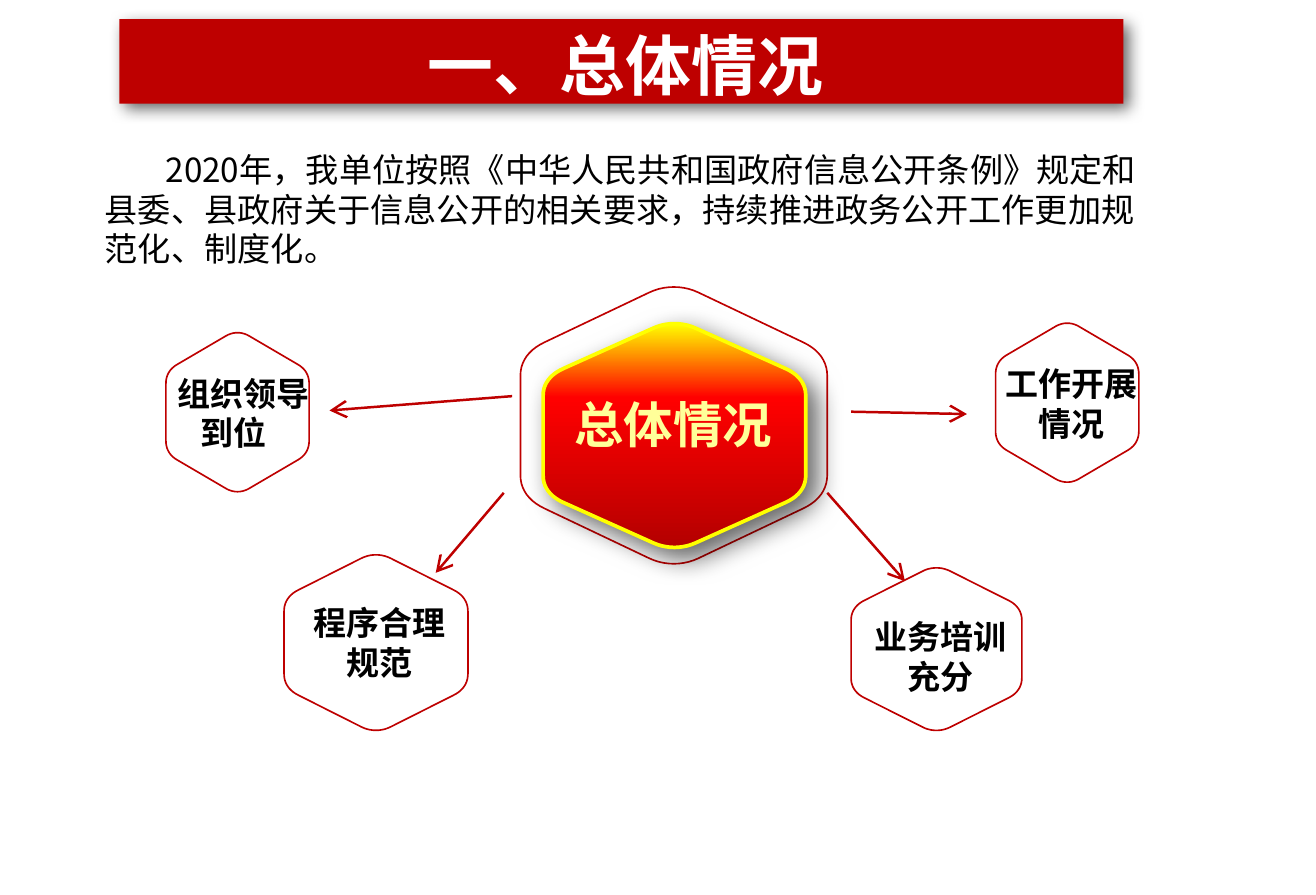
import pptx
import pptx.dml.color
import pptx.enum.shapes
import pptx.enum.text
import pptx.oxml
import pptx.oxml.ns
import pptx.util

EMU_PER_PX = 9144  # 100 px to the inch
FONT = "Noto Sans CJK SC"
RED = "BE0000"
YELLOW = "FFFF00"
BLACK = "000000"
CENTER = pptx.enum.text.PP_ALIGN.CENTER
LEFT = pptx.enum.text.PP_ALIGN.LEFT
qn = pptx.oxml.ns.qn

# Right half of the rounded hexagon's corners, as fractions of its size:
# curve start, two control points, curve end
TOP = [(0.42, 0.026), (0.47, 0), (0.53, 0), (0.58, 0.026)]
UPPER_RIGHT = [(0.922, 0.204), (0.973, 0.23), (1, 0.272), (1, 0.323)]


def px(length):
    return pptx.util.Emu(round(length * EMU_PER_PX))


def color(value):
    return pptx.dml.color.RGBColor.from_string(value)


def xml(tag, content):
    return pptx.oxml.parse_xml(f'<a:{tag} {pptx.oxml.ns.nsdecls("a")}{content}</a:{tag}>')


def gradient(stops, angle):
    stop_xml = "".join(f'<a:gs pos="{position * 1000}"><a:srgbClr val="{value}"/></a:gs>'
                       for position, value in stops)
    return xml("gradFill", f' rotWithShape="1"><a:gsLst>{stop_xml}</a:gsLst>'
                           f'<a:lin ang="{angle * 60000}" scaled="0"/>')


def curve(points, steps=10):
    a, b, c, d = points
    for step in range(steps + 1):
        t = step / steps
        u = 1 - t
        yield tuple(u**3 * a[i] + 3 * u * u * t * b[i] + 3 * u * t * t * c[i] + t**3 * d[i]
                    for i in (0, 1))


def hexagon_outline():
    lower_right = [(x, 1 - y) for x, y in reversed(UPPER_RIGHT)]
    half = [TOP, UPPER_RIGHT, lower_right]
    turned = [[(1 - x, 1 - y) for x, y in corner] for corner in half]
    return [point for corner in half + turned for point in curve(corner)]


class SlideBuilder:
    def __init__(self, slide):
        self.slide = slide
        self.shapes = slide.shapes

    def shadow(self, shape, blur, distance):
        effects = shape._element.spPr.find(qn("a:effectLst"))
        effects.append(xml("outerShdw", f' blurRad="{blur * 12700}" dist="{distance * 12700}" '
                           'dir="2700000" algn="tl" rotWithShape="0">'
                           f'<a:srgbClr val="{BLACK}"><a:alpha val="60000"/></a:srgbClr>'))

    def hexagon(self, left, top, width, height, line=RED, weight=1):
        points = [(px(left + x * width), px(top + y * height)) for x, y in hexagon_outline()]
        builder = self.shapes.build_freeform(*points[0])
        builder.add_line_segments(points[1:], close=True)
        shape = builder.convert_to_shape()
        shape.shadow.inherit = False
        shape.fill.background()
        shape.line.color.rgb = color(line)
        shape.line.width = pptx.util.Pt(weight)
        return shape

    def glowing_hexagon(self, left, top, width, height, stops):
        shape = self.hexagon(left, top, width, height, YELLOW, 2.25)
        properties = shape._element.spPr
        properties.replace(properties.find(qn("a:noFill")), gradient(stops, 270))
        self.shadow(shape, 16, 8)

    def banner(self, left, top, width, height):
        shape = self.shapes.add_shape(pptx.enum.shapes.MSO_SHAPE.RECTANGLE,
                                      px(left), px(top), px(width), px(height))
        shape.shadow.inherit = False
        shape.fill.solid()
        shape.fill.fore_color.rgb = color(RED)
        shape.line.fill.background()
        self.shadow(shape, 10, 4)

    def arrow(self, x1, y1, x2, y2):
        connector = self.shapes.add_connector(pptx.enum.shapes.MSO_CONNECTOR.STRAIGHT,
                                              px(x1), px(y1), px(x2), px(y2))
        connector.line.color.rgb = color(RED)
        connector.line.width = pptx.util.Pt(1.5)
        properties = connector._element.spPr
        properties.find(qn("a:ln")).append(xml("tailEnd", ' type="arrow" w="lg" len="lg">'))
        properties.append(xml("effectLst", ">"))

    def text(self, left, top, width, height, paragraphs, size, align=CENTER,
             bold=True, fill=BLACK, stops=None):
        """Each paragraph is (text, left margin, first-line indent)."""
        box = self.shapes.add_textbox(px(left), px(top), px(width), px(height))
        frame = box.text_frame
        frame.word_wrap = True
        for index, (content, margin, indent) in enumerate(paragraphs):
            paragraph = frame.add_paragraph() if index else frame.paragraphs[0]
            paragraph.alignment = align
            properties = paragraph._p.get_or_add_pPr()
            properties.set("marL", str(px(margin)))
            properties.set("indent", str(px(indent)))
            run = paragraph.add_run()
            run.text = content
            run.font.size = pptx.util.Pt(size)
            run.font.bold = bold
            run.font.name = FONT
            run_properties = run._r.get_or_add_rPr()
            run_properties.append(xml("ea", f' typeface="{FONT}">'))
            if stops:
                run_properties.insert(0, gradient(stops, 90))
            else:
                run.font.color.rgb = color(fill)


def main():
    presentation = pptx.Presentation()
    presentation.slide_width = pptx.util.Cm(28)
    presentation.slide_height = px(750)
    builder = SlideBuilder(presentation.slides.add_slide(presentation.slide_layouts[6]))

    # Central hexagon
    builder.hexagon(436, 239, 257, 235)
    builder.glowing_hexagon(455, 270, 220, 190, [(0, "B40000"), (67, "FF0000"), (100, YELLOW)])
    builder.text(469, 325, 190, 60, [("总体情况", 0, 0)], 29.8,
                 stops=[(0, "FFC000"), (33, "FFFF99"), (66, "F2B800"), (100, YELLOW)])

    # Outer hexagons
    for frame in [(713, 475, 143, 138), (238, 464, 154, 149),
                  (834, 270, 120, 135), (139, 278, 120, 135)]:
        builder.hexagon(*frame)

    # Arrows from the centre
    for ends in [(429, 332, 276, 344), (693, 413, 758, 487),
                 (422, 413, 365, 480), (713, 345, 810, 347)]:
        builder.arrow(*ends)

    # Outer labels
    builder.text(139, 308, 351, 77, [("组织领导", 0, 0), ("到位", 19, 0)], 19.9, LEFT)
    for left, top, width, label in [(243, 500, 149, "程序合理规范"),
                                    (718, 512, 139, "业务培训充分"),
                                    (825, 300, 146, "工作开展情况")]:
        builder.text(left, top, width, 77, [(label, 0, 0)], 19.9)

    # Title banner
    builder.banner(100, 16, 841, 71)
    builder.text(330, 16, 388, 77, [("一、总体情况", 0, 0)], 39.7, fill="FFFFFF")

    # Introduction
    introduction = ("2020年，我单位按照《中华人民共和国政府信息公开条例》规定和县委、县政府关于"
                    "信息公开的相关要求，持续推进政务公开工作更加规范化、制度化。")
    builder.text(78, 120, 893, 111, [(introduction, 0, 51)], 20, LEFT, bold=False)

    presentation.save("out.pptx")


if __name__ == "__main__":
    main()
